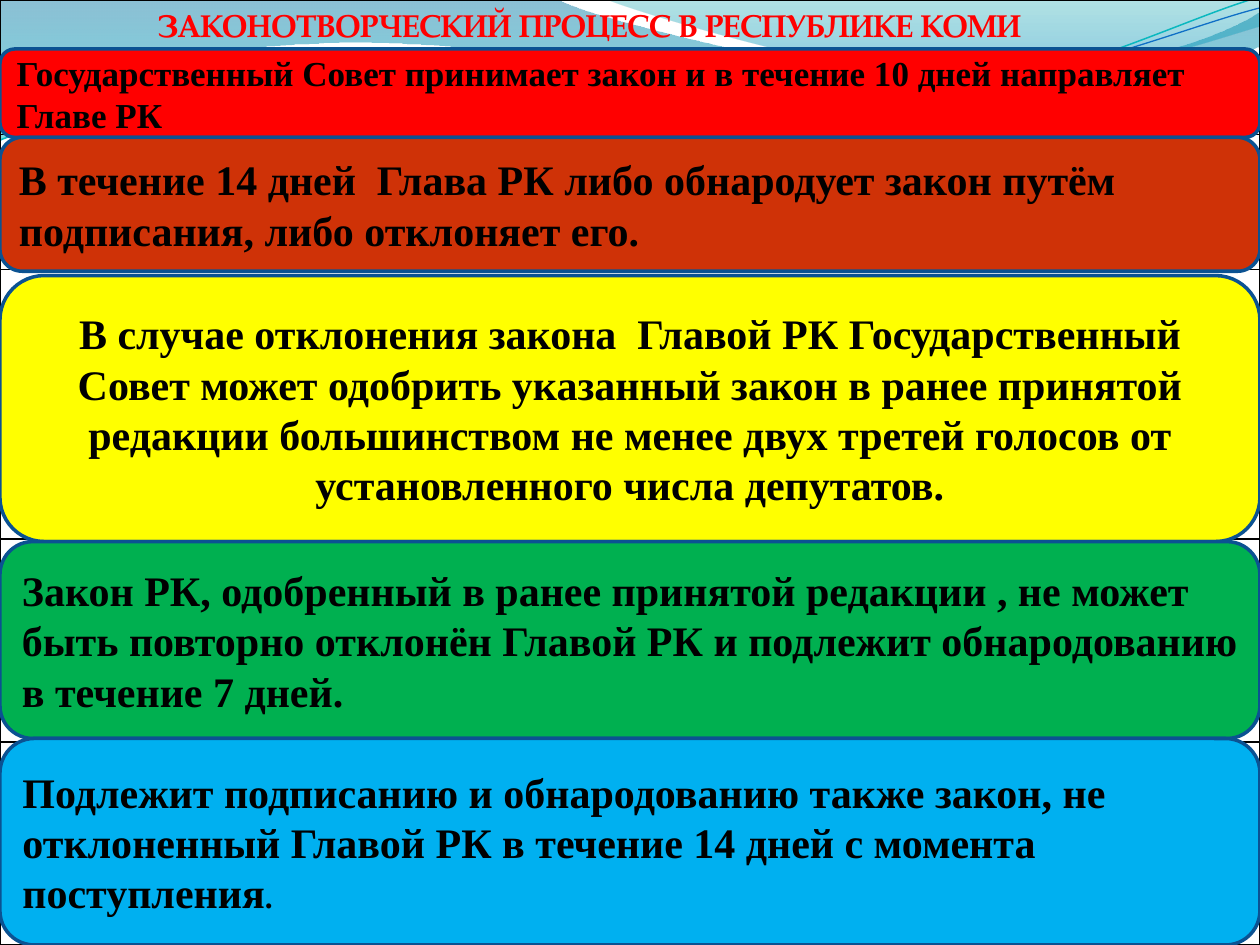
from lxml import etree
from pptx import Presentation
from pptx import util as u
from pptx.dml.color import RGBColor
from pptx.enum import shapes, text
from pptx.oxml.ns import qn

BLACK = RGBColor(0x00, 0x00, 0x00)
RED = RGBColor(0xFF, 0x00, 0x00)
RUST = RGBColor(0xCF, 0x32, 0x07)
YELLOW = RGBColor(0xFF, 0xFF, 0x00)
GREEN = RGBColor(0x00, 0xB0, 0x50)
SKY = RGBColor(0x00, 0xB0, 0xF0)
NAVY = RGBColor(0x0B, 0x52, 0x92)
DEEP_TEAL = RGBColor(0x00, 0x74, 0xA1)
AQUA = RGBColor(0x00, 0xC6, 0xCF)
TEAL = RGBColor(0x00, 0xA1, 0xA9)
OCEAN = RGBColor(0x00, 0x8B, 0xBF)
CYAN = RGBColor(0x0A, 0xB8, 0xBF)
BLUE = RGBColor(0x0F, 0x6F, 0xC6)

WIDTH, HEIGHT = 720, 540
TITLE_FONT = "TeX Gyre Pagella"
BODY_FONT = "Times New Roman"
LEFT, CENTER = text.PP_ALIGN.LEFT, text.PP_ALIGN.CENTER

ROW_HEIGHTS = [77, 77, 154, 116, 116]

WAVES = [
    ([(0, 0), (317, -1), (343, 12, 478, 45, 546, 45), (614, 45, 690, 27, 720, 6.5),
      (721, 26), (708, 32, 626, 55, 537, 54), (448, 54, 275, 20, 185, 24.5),
      (93, 26, 33, 60, -1, 81)],
     [(0, DEEP_TEAL, 45), (1, AQUA, 55)]),
    ([(345, -1), (366, 8, 491, 45, 554, 47), (616, 50, 692, 23, 720, 15), (720, 0)],
     [(0, TEAL, 30), (0.8, OCEAN, 45)]),
]

STRANDS = [
    ([(0, 80), (35, 67, 114, 41, 199, 37.5), (284, 34, 427, 64, 513, 57.5),
      (600, 51, 675, 11, 719, -1.5)], CYAN, 0.85),
    ([(0, 75), (34, 69, 118, 44, 204, 40), (290, 37, 430, 60.5, 516, 54),
      (602, 48, 678, 15, 720, 4.5)], BLUE, 0.75),
]

STEPS = [
    (28, 50.5, RED, LEFT,
     [("Государственный Совет принимает закон и в течение 10 дней направляет Главе РК", 20)]),
    (78.5, 76.5, RUST, LEFT,
     [("В течение 14 дней  Глава РК либо обнародует закон путём подписания, "
       "либо отклоняет его.", 24)]),
    (157.5, 152, YELLOW, CENTER,
     [("В случае отклонения закона  Главой РК Государственный Совет может одобрить "
       "указанный закон в ранее принятой редакции большинством не менее двух третей "
       "голосов от установленного числа депутатов.", 24)]),
    (309.5, 112.5, GREEN, LEFT,
     [("Закон РК, одобренный в ранее принятой редакции , не может быть повторно "
       "отклонён Главой РК и подлежит обнародованию в течение 7 дней.", 24)]),
    (422, 118, SKY, LEFT,
     [("Подлежит подписанию и обнародованию также закон, не отклоненный Главой РК "
       "в течение 14 дней с момента поступления", 24), (".", 18)]),
]


def bend(outline, segments):
    lines = iter(list(outline._element.iter(qn("a:lnTo"))))
    for segment in segments:
        group = [next(lines) for _ in range(len(segment) // 2)]
        if len(group) == 3:
            curve = etree.Element(qn("a:cubicBezTo"))
            group[0].addprevious(curve)
            for line in group:
                curve.append(line[0])
                line.getparent().remove(line)


def add_outline(page, segments, close):
    points = [(u.Pt(x), u.Pt(y)) for segment in segments
              for x, y in zip(segment[::2], segment[1::2])]
    builder = page.shapes.build_freeform(*points[0])
    builder.add_line_segments(points[1:], close=close)
    outline = builder.convert_to_shape()
    outline.shadow.inherit = False
    bend(outline, segments[1:])
    return outline


def add_wave(page, segments, stops):
    wave = add_outline(page, segments, True)
    wave.line.fill.background()
    wave.fill.gradient()
    wave.fill.gradient_angle = 270
    for stop, (position, color, _) in zip(wave.fill.gradient_stops, stops):
        stop.position = position
        stop.color.rgb = color
    for node, (_, _, opacity) in zip(wave._element.spPr.iter(qn("a:srgbClr")), stops):
        etree.SubElement(node, qn("a:alpha"), val=str(opacity * 1000))


def add_strand(page, segments, color, weight):
    strand = add_outline(page, segments, False)
    strand.fill.background()
    strand.line.color.rgb = color
    strand.line.width = u.Pt(weight)


def add_cell_borders(cell):
    properties = cell._tc.get_or_add_tcPr()
    for index, side in enumerate(("a:lnL", "a:lnR", "a:lnT", "a:lnB")):
        border = etree.Element(qn(side), w=str(u.Pt(1)))
        fill = etree.SubElement(border, qn("a:solidFill"))
        etree.SubElement(fill, qn("a:srgbClr"), val=str(BLACK))
        properties.insert(index, border)


def add_grid(page):
    frame = page.shapes.add_table(len(ROW_HEIGHTS), 1, 0, 0, u.Pt(WIDTH), u.Pt(HEIGHT))
    table = frame.table
    table.first_row = table.horz_banding = False
    for row, height in zip(table.rows, ROW_HEIGHTS):
        row.height = u.Pt(height)
        cell = row.cells[0]
        cell.fill.background()
        add_cell_borders(cell)


def add_span(para, wording, font, size, color, bold):
    span = para.add_run()
    span.text = wording
    span.font.name = font
    span.font.size = u.Pt(size)
    span.font.color.rgb = color
    span.font.bold = bold


def add_title(page):
    box = page.shapes.add_textbox(u.Pt(78.5), 0, u.Pt(551.5), u.Pt(29))
    box.text_frame.word_wrap = True
    para = box.text_frame.paragraphs[0]
    add_span(para, " ", TITLE_FONT, 18, BLACK, False)
    add_span(para, "ЗАКОНОТВОРЧЕСКИЙ ПРОЦЕСС В РЕСПУБЛИКЕ КОМИ", TITLE_FONT, 18, RED, True)


def add_step(page, top, height, color, alignment, spans):
    box = page.shapes.add_shape(shapes.MSO_SHAPE.FLOWCHART_ALTERNATE_PROCESS,
                                0, u.Pt(top), u.Pt(WIDTH), u.Pt(height))
    box.shadow.inherit = False
    box.fill.solid()
    box.fill.fore_color.rgb = color
    box.line.color.rgb = NAVY
    box.line.width = u.Pt(2)
    box.text_frame.word_wrap = True
    box.text_frame.vertical_anchor = text.MSO_ANCHOR.MIDDLE
    para = box.text_frame.paragraphs[0]
    para.alignment = alignment
    for wording, size in spans:
        add_span(para, wording, BODY_FONT, size, BLACK, True)


def main():
    deck = Presentation()
    deck.slide_width, deck.slide_height = u.Pt(WIDTH), u.Pt(HEIGHT)
    page = deck.slides.add_slide(deck.slide_layouts[6])
    for wave in WAVES:
        add_wave(page, *wave)
    for strand in STRANDS:
        add_strand(page, *strand)
    add_grid(page)
    add_title(page)
    for step in STEPS:
        add_step(page, *step)
    deck.save("out.pptx")


if __name__ == "__main__":
    main()
